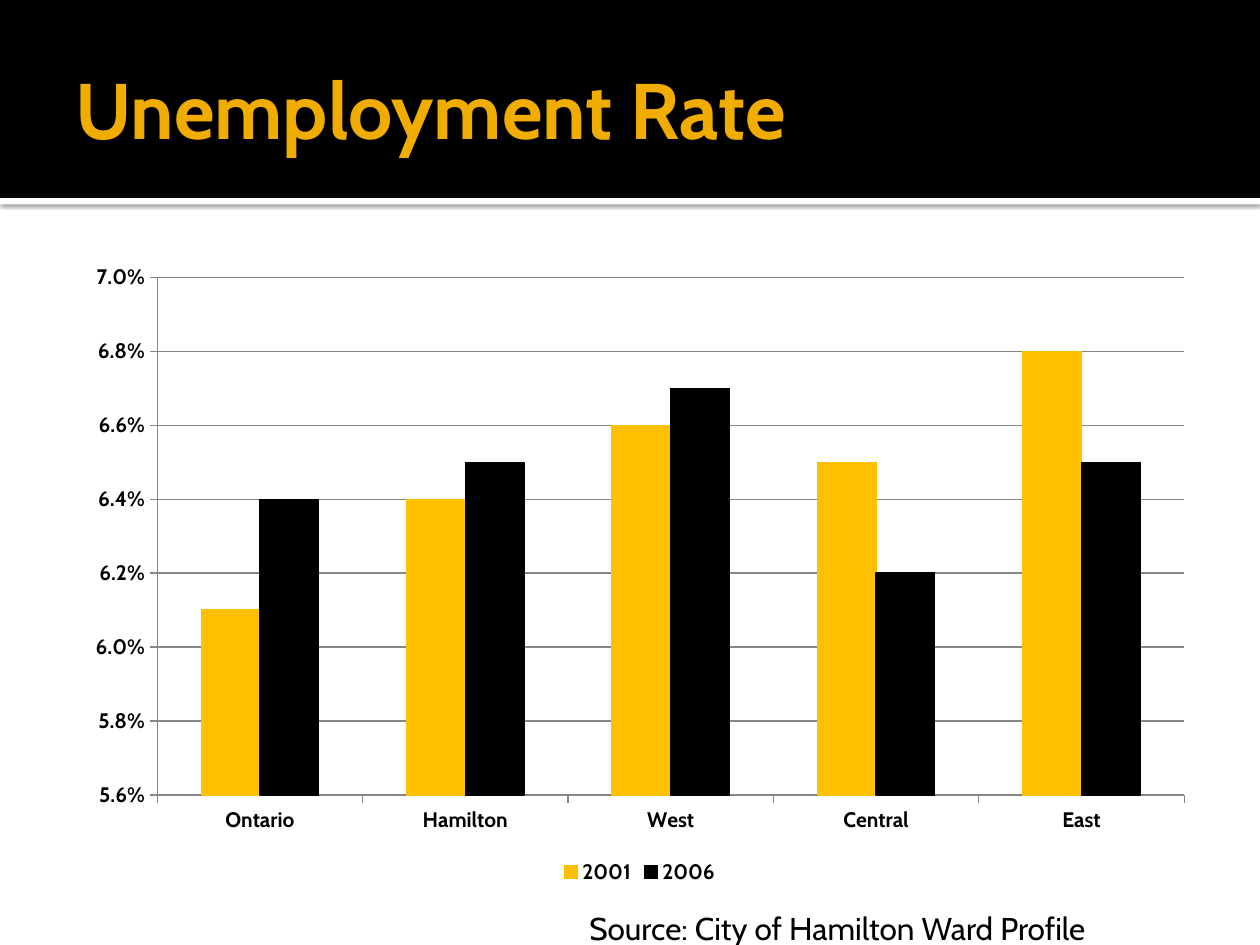
from dataclasses import dataclass
from typing import Any

from lxml import etree
from pptx import Presentation
from pptx.chart import data as chart_data
from pptx.dml.color import RGBColor
from pptx.enum import chart as charts, shapes, text
from pptx.oxml import ns
from pptx.util import Cm, Pt


@dataclass(frozen=True)
class Theme:
    """Colours, font and type sizes of the slide."""
    font: str = "Cabin"
    black: RGBColor = RGBColor(0, 0, 0)
    white: RGBColor = RGBColor(255, 255, 255)
    title: RGBColor = RGBColor(0xF0, 0xAD, 0x00)
    amber: RGBColor = RGBColor(0xFF, 0xC0, 0x00)
    axis: RGBColor = RGBColor(0x86, 0x86, 0x86)
    title_size: int = 45
    source_size: int = 18
    chart_size: int = 12


@dataclass(frozen=True)
class Box:
    """A position and size in centimetres."""
    left: float
    top: float
    width: float
    height: float

    def lengths(self) -> tuple:
        """Return the four values as lengths."""
        return Cm(self.left), Cm(self.top), Cm(self.width), Cm(self.height)


@dataclass(frozen=True)
class Band:
    """A full-width bar of the header."""
    box: Box
    color: RGBColor
    shadow: bool


@dataclass(frozen=True)
class Series:
    """One year of unemployment rates."""
    name: str
    rates: tuple
    color: RGBColor


THEME = Theme()
TITLE_BOX = Box(1.27, 0.43, 22.86, 3.48)
CHART_BOX = Box(1.47, 5.08, 22.86, 12.85)
SOURCE_BOX = Box(11.63, 18.21, 12.07, 1.02)
BANDS = (
    Band(Box(0, 3.99, 25.4, 0.13), THEME.white, True),
    Band(Box(0, 0, 25.4, 3.99), THEME.black, False),
)
REGIONS = ("Ontario", "Hamilton", "West", "Central", "East")
SERIES = (
    Series("2001", (0.061, 0.064, 0.066, 0.065, 0.068), THEME.amber),
    Series("2006", (0.064, 0.065, 0.067, 0.062, 0.065), THEME.black),
)


def apply(target: Any, values: dict) -> None:
    """Set each named attribute on the target."""
    for name, value in values.items():
        setattr(target, name, value)


def format_font(font: Any, size: int, color: RGBColor, bold: bool) -> None:
    """Set the theme font with a size, colour and weight."""
    apply(font, {"name": THEME.font, "size": Pt(size), "bold": bold})
    font.color.rgb = color


def add_shadow(shape: Any) -> None:
    """Give the shape a soft shadow below it."""
    effects = shape.element.spPr.find(ns.qn("a:effectLst"))
    shadow = etree.SubElement(effects, ns.qn("a:outerShdw"), blurRad=str(Pt(2.5)),
                              dist=str(Pt(0.8)), dir="5400000", rotWithShape="0")
    color = etree.SubElement(shadow, ns.qn("a:srgbClr"), val=str(THEME.black))
    etree.SubElement(color, ns.qn("a:alpha"), val="60000")


def draw_band(slide: Any, band: Band) -> None:
    """Draw a header bar behind the title."""
    shape = slide.shapes.add_shape(shapes.MSO_SHAPE.RECTANGLE, *band.box.lengths())
    shape.fill.solid()
    shape.fill.fore_color.rgb = band.color
    shape.line.fill.background()
    shape.shadow.inherit = False
    if band.shadow:
        add_shadow(shape)
    slide.shapes.title.element.addprevious(shape.element)


def draw_title(slide: Any, wording: str) -> None:
    """Place and format the title placeholder."""
    title = slide.shapes.title
    apply(title, dict(zip(("left", "top", "width", "height"), TITLE_BOX.lengths())))
    frame = title.text_frame
    apply(frame, {
        "text": wording, "word_wrap": True, "auto_size": text.MSO_AUTO_SIZE.NONE,
        "vertical_anchor": text.MSO_ANCHOR.MIDDLE, "margin_left": Cm(0.25),
        "margin_right": Cm(0.13), "margin_top": Cm(0.13), "margin_bottom": Cm(0.13),
    })
    paragraph = frame.paragraphs[0]
    paragraph.alignment = text.PP_ALIGN.LEFT
    format_font(paragraph.runs[0].font, THEME.title_size, THEME.title, True)


def draw_source(slide: Any, wording: str) -> None:
    """Add the source line below the chart."""
    frame = slide.shapes.add_textbox(*SOURCE_BOX.lengths()).text_frame
    apply(frame, {"text": wording, "word_wrap": True,
                  "auto_size": text.MSO_AUTO_SIZE.SHAPE_TO_FIT_TEXT})
    format_font(frame.paragraphs[0].runs[0].font, THEME.source_size, THEME.black, False)


def format_line(line: Any, color: RGBColor) -> None:
    """Set a thin line in the given colour."""
    line.color.rgb = color
    line.width = Pt(0.75)


def draw_chart(slide: Any) -> None:
    """Add the clustered column chart of rates by region."""
    data = chart_data.CategoryChartData(number_format="0.0%")
    data.categories = REGIONS
    for series in SERIES:
        data.add_series(series.name, series.rates)
    chart = slide.shapes.add_chart(
        charts.XL_CHART_TYPE.COLUMN_CLUSTERED, *CHART_BOX.lengths(), data).chart
    apply(chart, {"has_title": False, "has_legend": True})
    format_font(chart.font, THEME.chart_size, THEME.black, True)
    apply(chart.legend, {"position": charts.XL_LEGEND_POSITION.BOTTOM,
                         "include_in_layout": False})
    plot = chart.plots[0]
    apply(plot, {"gap_width": 150, "overlap": 0, "vary_by_categories": False})
    for drawn, series in zip(plot.series, SERIES):
        drawn.invert_if_negative = False
        drawn.format.fill.solid()
        drawn.format.fill.fore_color.rgb = series.color
        format_line(drawn.format.line, series.color)
    for axis in (chart.category_axis, chart.value_axis):
        axis.major_tick_mark = charts.XL_TICK_MARK.OUTSIDE
        format_line(axis.format.line, THEME.axis)
    rates = chart.value_axis
    apply(rates, {"minimum_scale": 0.056, "maximum_scale": 0.07,
                  "major_unit": 0.002, "has_major_gridlines": True})
    apply(rates.tick_labels, {"number_format": "0.0%", "number_format_is_linked": False})
    format_line(rates.major_gridlines.format.line, THEME.axis)


def main() -> None:
    """Build and save the slide."""
    presentation = Presentation()
    apply(presentation, {"slide_width": Cm(25.4), "slide_height": Cm(19.05)})
    slide = presentation.slides.add_slide(presentation.slide_layouts.get_by_name("Title Only"))
    for band in BANDS:
        draw_band(slide, band)
    draw_title(slide, "Unemployment Rate")
    draw_chart(slide)
    draw_source(slide, "Source: City of Hamilton Ward Profile")
    presentation.save("out.pptx")


if __name__ == "__main__":
    main()
